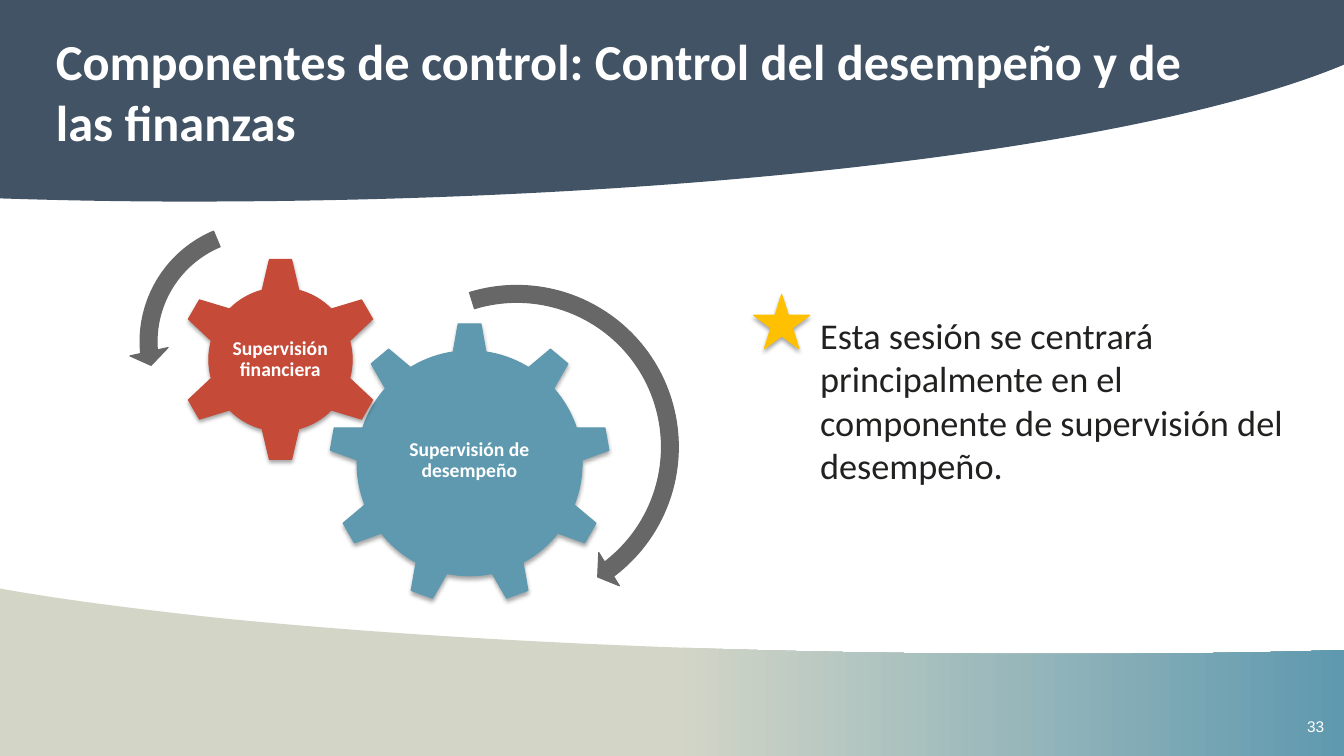
from dataclasses import dataclass

import pptx
import pptx.dml.color
import pptx.enum.shapes
import pptx.enum.text
import pptx.oxml
import pptx.oxml.ns
import pptx.util

Cm = pptx.util.Cm
Pt = pptx.util.Pt
SHAPE = pptx.enum.shapes.MSO_SHAPE
ALIGN = pptx.enum.text.PP_ALIGN
ANCHOR = pptx.enum.text.MSO_ANCHOR


@dataclass(frozen=True)
class Theme:
    navy: str = "415364"
    sage: str = "D3D6C7"
    teal: str = "5F99AF"
    red: str = "C54B38"
    grey: str = "676767"
    gold: str = "FFC000"
    ink: str = "212120"
    white: str = "FFFFFF"
    font: str = "Calibri"
    number_font: str = "Arial"
    title_size: float = 36
    body_size: float = 25.9
    gear_size: float = 14
    number_size: float = 11


THEME = Theme()
SLIDE_W, SLIDE_H = 33.87, 19.05


def rgb(value):
    return pptx.dml.color.RGBColor.from_string(value)


def add_band(slide, start, segments):
    """Closed outline; a segment is (end,) or (control, control, end)."""
    builder = slide.shapes.build_freeform(Cm(start[0]), Cm(start[1]))
    builder.add_line_segments([(Cm(x), Cm(y)) for *_, (x, y) in segments])
    band = builder.convert_to_shape()
    band.shadow.inherit = False
    band.line.fill.background()

    # Bend the sides that have control points
    sides = list(band._element.iter(pptx.oxml.ns.qn("a:lnTo")))
    for side, segment in zip(sides, segments):
        if len(segment) == 3:
            points = "".join(
                f'<a:pt x="{Cm(x) - band.left}" y="{Cm(y) - band.top}"/>'
                for x, y in segment)
            side.getparent().replace(side, pptx.oxml.parse_xml(
                f'<a:cubicBezTo {pptx.oxml.ns.nsdecls("a")}>{points}</a:cubicBezTo>'))
    return band


def add_soft_shadow(shape):
    effects = shape._element.spPr.find(pptx.oxml.ns.qn("a:effectLst"))
    effects.append(pptx.oxml.parse_xml(
        f'<a:outerShdw {pptx.oxml.ns.nsdecls("a")} blurRad="39400" dist="22900"'
        ' dir="5400000" rotWithShape="0"><a:srgbClr val="000000">'
        '<a:alpha val="35000"/></a:srgbClr></a:outerShdw>'))


def add_figure(slide, kind, box, color, shadow=False):
    figure = slide.shapes.add_shape(kind, *map(Cm, box))
    figure.fill.solid()
    figure.fill.fore_color.rgb = rgb(color)
    figure.line.color.rgb = rgb(color)
    figure.line.width = Pt(0.75)
    figure.shadow.inherit = False
    if shadow:
        add_soft_shadow(figure)
    return figure


def add_turning_arrow(slide, kind, box, band_percent, head_percent, angles):
    """Angles in degrees: arrowhead, end and start of the arc."""
    arrow = add_figure(slide, kind, box, THEME.grey)
    values = [band_percent / 100, *(angle * 0.6 for angle in angles), head_percent / 100]
    for index, value in enumerate(values):
        arrow.adjustments[index] = value


def add_text(slide, box, text, size, color, font=THEME.font, bold=False, wrap=True):
    caption = slide.shapes.add_textbox(*map(Cm, box))
    frame = caption.text_frame
    frame.word_wrap = wrap
    frame.text = text
    run_font = frame.paragraphs[0].runs[0].font
    run_font.name = font
    run_font.size = Pt(size)
    run_font.bold = bold
    run_font.color.rgb = rgb(color)
    return frame


def add_gear(slide, kind, box, color, label_box, label):
    add_figure(slide, kind, box, color, shadow=True)
    frame = add_text(slide, label_box, label, THEME.gear_size, THEME.white, bold=True)
    frame.vertical_anchor = ANCHOR.MIDDLE
    frame.margin_left = frame.margin_right = Cm(0.05)
    frame.margin_top = frame.margin_bottom = Cm(0.05)
    frame.paragraphs[0].alignment = ALIGN.CENTER
    frame.paragraphs[0].line_spacing = 0.9


def add_background(slide):
    header = add_band(slide, (SLIDE_W, 1.63), [
        ((SLIDE_W, 0),), ((0, 0),), ((0, 5),),
        ((1.52, 5.05), (3.12, 5.08), (4.72, 5.08)),
        ((17.78, 5.08), (29.01, 3.66), (SLIDE_W, 1.63))])
    header.fill.solid()
    header.fill.fore_color.rgb = rgb(THEME.navy)

    footer = add_band(slide, (26.44, 16.48), [
        ((18.42, 16.48), (11.07, 16.13), (5.49, 15.57)),
        ((3.38, 15.34), (1.55, 15.11), (0, 14.83)),
        ((0, SLIDE_H),), ((SLIDE_W, SLIDE_H),), ((SLIDE_W, 16.38),),
        ((31.5, 16.46), (29.01, 16.48), (26.44, 16.48))])
    footer.fill.gradient()
    footer.fill.gradient_angle = 0
    stops = ((0.5, THEME.sage), (1, THEME.teal))
    for stop, (position, color) in zip(footer.fill.gradient_stops, stops):
        stop.position = position
        stop.color.rgb = rgb(color)


def main():
    deck = pptx.Presentation()
    deck.slide_width, deck.slide_height = Cm(SLIDE_W), Cm(SLIDE_H)
    slide = deck.slides.add_slide(deck.slide_layouts[6])

    # Curved bands, slide number and title
    add_background(slide)
    add_text(slide, (32.69, 17.95, 0.99, 0.74), "33", THEME.number_size,
             THEME.white, font=THEME.number_font, wrap=False)
    add_text(slide, (1.16, 0.64, 30.48, 3.89),
             "Componentes de control: Control del desempeño y de las finanzas",
             THEME.title_size, THEME.white, bold=True)

    # Gears
    add_gear(slide, SHAPE.GEAR_9, (8.29, 8.13, 7.09, 7.09), THEME.teal,
             (9.71, 9.79, 4.24, 3.63), "Supervisión de desempeño")
    add_gear(slide, SHAPE.GEAR_6, (4.49, 6.48, 5.16, 5.16), THEME.red,
             (5.78, 7.8, 2.57, 2.54), "Supervisión financiera")

    # Turning arrows
    add_turning_arrow(slide, SHAPE.CIRCULAR_ARROW, (8.67, 6.91, 8.71, 8.71),
                      4.9, 5.7, (5.21, 52.92, 252.96))
    add_turning_arrow(slide, SHAPE.LEFT_CIRCULAR_ARROW, (3.25, 5.31, 6.6, 6.6),
                      6.5, 7.5, (7.17, 174.82, 247.3))

    # Session focus
    add_figure(slide, SHAPE.STAR_5_POINT, (18.99, 7.42, 1.42, 1.37), THEME.gold,
               shadow=True)
    add_text(slide, (20.42, 7.76, 12.55, 3.89),
             "Esta sesión se centrará principalmente en el componente de "
             "supervisión del desempeño.", THEME.body_size, THEME.ink)

    deck.save("out.pptx")


if __name__ == "__main__":
    main()
